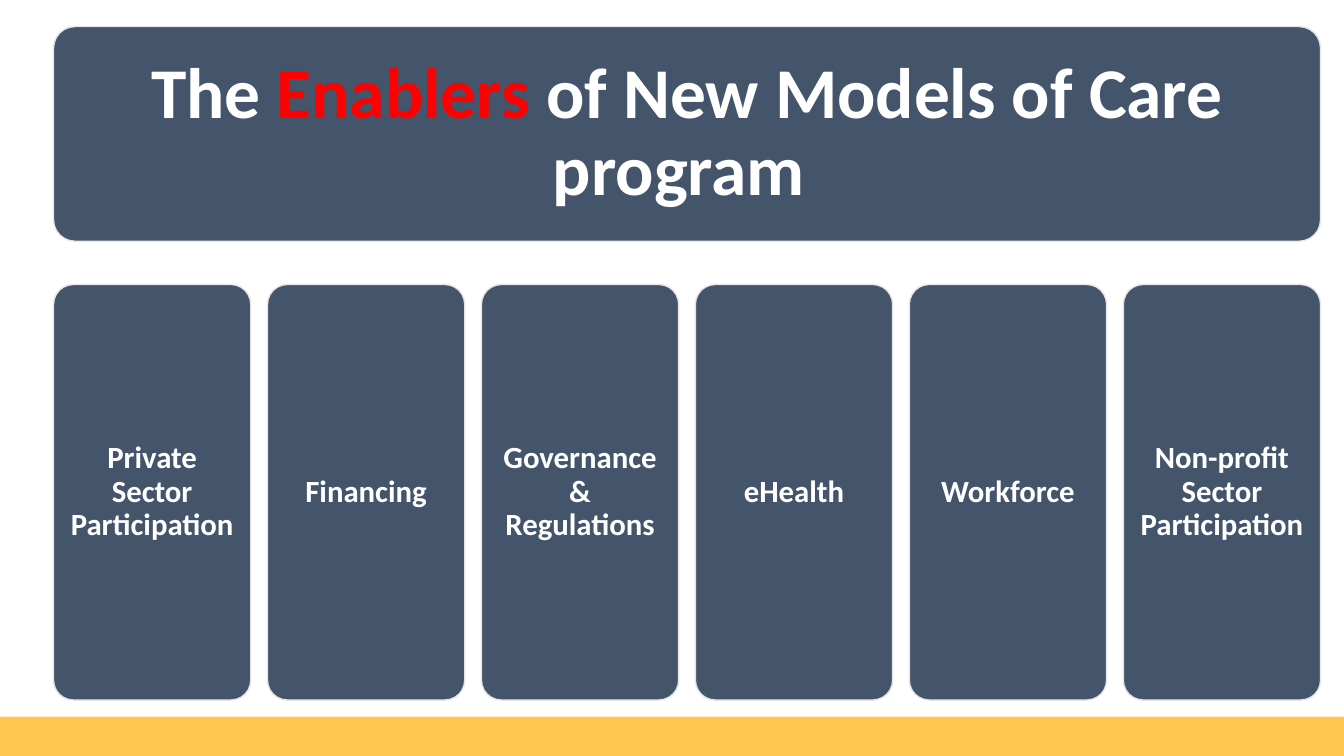
from pptx import Presentation
from pptx import util as u
from pptx.dml.color import RGBColor
from pptx.enum import shapes, text
from pptx.oxml.ns import qn
from lxml import etree

COLOURS = {
    "panel": "44546A",
    "outline": "E7E6E6",
    "band": "FFBF35",
    "text": "FFFFFF",
    "accent": "FF0000",
}
FONT = "Calibri"
SLIDE_WIDTH, SLIDE_HEIGHT = 33.87, 19.05
LEFT, CONTENT_WIDTH = 1.35, 31.93
HEADER_TOP, HEADER_HEIGHT = 0.67, 5.41
CARD_TOP, CARD_WIDTH, CARD_HEIGHT = 7.17, 4.97, 10.47
BAND_TOP = 18.06

TITLE = [
    ("The ", "text"),
    ("Enablers ", "accent"),
    ("of New Models of Care program ", "text"),
]
ENABLERS = [
    "Private Sector Participation",
    "Financing",
    "Governance & Regulations",
    "eHealth",
    "Workforce",
    "Non-profit Sector Participation",
]


def colour(name):
    return RGBColor.from_string(COLOURS[name])


def add_box(page, kind, left, top, width, height, fill):
    box = page.shapes.add_shape(
        kind, u.Cm(left), u.Cm(top), u.Cm(width), u.Cm(height))
    box.shadow.inherit = False
    box.fill.solid()
    box.fill.fore_color.rgb = colour(fill)
    return box


def add_band(page):
    band = add_box(page, shapes.MSO_SHAPE.RECTANGLE, 0, BAND_TOP,
                   SLIDE_WIDTH, SLIDE_HEIGHT - BAND_TOP, "band")
    band.line.fill.background()
    tint = band.element.spPr.find(qn("a:solidFill"))[0]
    etree.SubElement(tint, qn("a:alpha"), val="87000")
    return band


def add_panel(page, left, top, width, height):
    panel = add_box(page, shapes.MSO_SHAPE.ROUNDED_RECTANGLE,
                    left, top, width, height, "panel")
    panel.adjustments[0] = 0.1
    panel.line.color.rgb = colour("outline")
    panel.line.width = u.Pt(1)
    return panel


def write_text(box, runs, size, margin):
    frame = box.text_frame
    frame.word_wrap = True
    frame.auto_size = text.MSO_AUTO_SIZE.NONE
    frame.vertical_anchor = text.MSO_ANCHOR.MIDDLE
    frame.margin_left = frame.margin_right = u.Cm(margin)
    frame.margin_top = frame.margin_bottom = u.Cm(margin)
    para = frame.paragraphs[0]
    para.alignment = text.PP_ALIGN.CENTER
    para.line_spacing = 0.9
    para.font.name = FONT
    para.font.size = u.Pt(size)
    para.font.bold = True
    para.font.color.rgb = colour("text")
    for wording, tone in runs:
        span = para.add_run()
        span.text = wording
        if tone != "text":
            span.font.color.rgb = colour(tone)


def add_title(page):
    panel = add_panel(page, LEFT, HEADER_TOP, CONTENT_WIDTH, HEADER_HEIGHT)
    title = page.shapes.title
    title.element.addprevious(panel.element)
    inset = 0.16
    title.left, title.top = u.Cm(LEFT + inset), u.Cm(HEADER_TOP + inset)
    title.width = u.Cm(CONTENT_WIDTH - 2 * inset)
    title.height = u.Cm(HEADER_HEIGHT - 2 * inset)
    write_text(title, TITLE, 51, 0.53)


def add_cards(page):
    pitch = (CONTENT_WIDTH - CARD_WIDTH) / (len(ENABLERS) - 1)
    for index, enabler in enumerate(ENABLERS):
        card = add_panel(page, LEFT + index * pitch, CARD_TOP,
                         CARD_WIDTH, CARD_HEIGHT)
        write_text(card, [(enabler, "text")], 22, 0.23)


def main():
    deck = Presentation()
    deck.slide_width = u.Cm(SLIDE_WIDTH)
    deck.slide_height = u.Cm(SLIDE_HEIGHT)
    page = deck.slides.add_slide(deck.slide_layouts.get_by_name("Title Only"))
    add_band(page)
    add_title(page)
    add_cards(page)
    deck.save("out.pptx")


if __name__ == "__main__":
    main()
